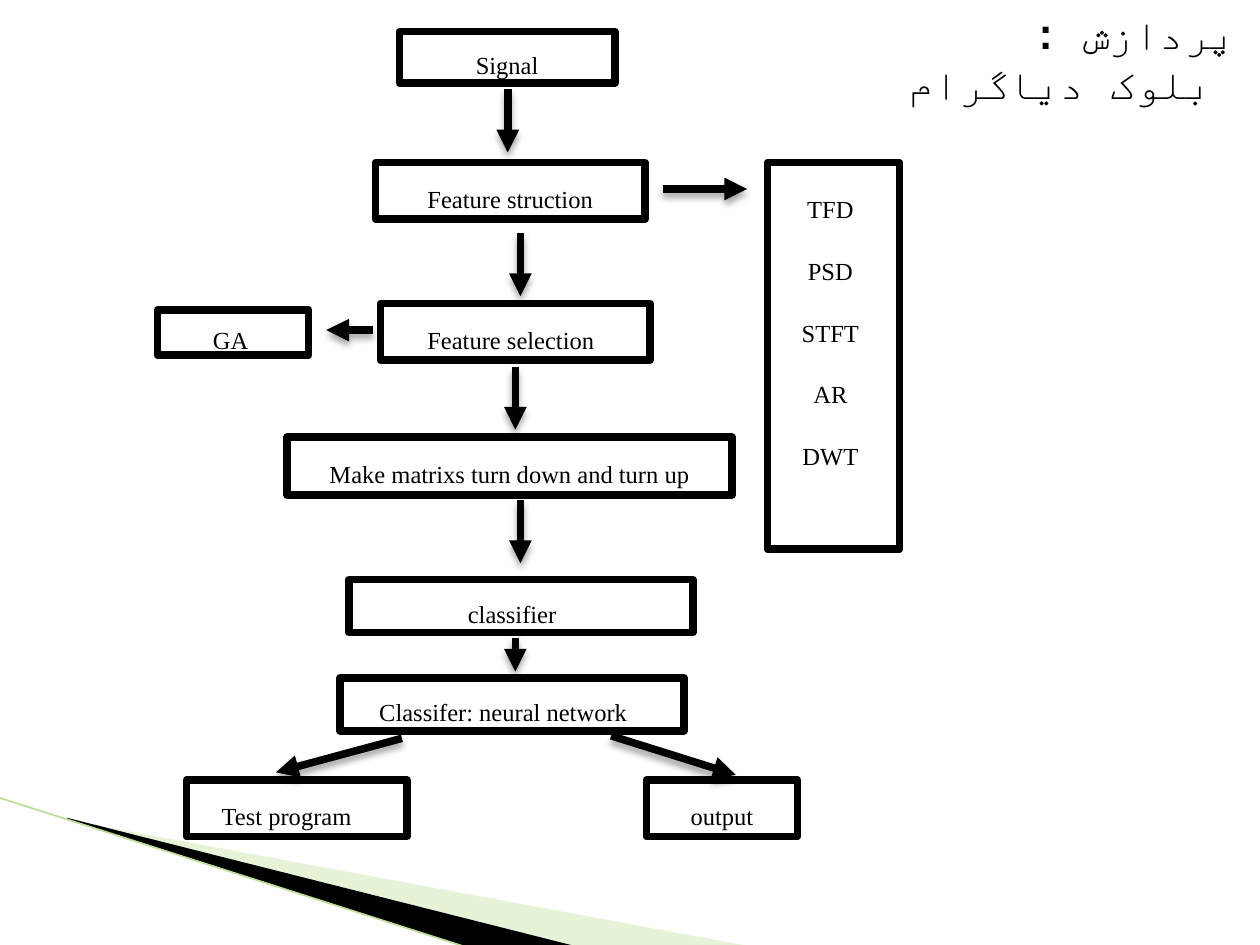
from lxml import etree
from pptx import Presentation
from pptx.dml.color import RGBColor
from pptx.enum.shapes import MSO_CONNECTOR as Connector, MSO_SHAPE as Shape
from pptx.enum.text import MSO_ANCHOR as Anchor, MSO_AUTO_SIZE as AutoSize, PP_ALIGN as Align
from pptx.oxml.ns import qn
from pptx.util import Inches, Pt

BLACK = RGBColor(0x00, 0x00, 0x00)
WHITE = RGBColor(0xFF, 0xFF, 0xFF)
LEAF = RGBColor(0xC3, 0xE1, 0x9D)
STEM = RGBColor(0xBD, 0xDC, 0x94)

BORDER = Pt(4.33)
TITLE_FONT = {"name": "Courier New", "size": Pt(24), "bold": True}
STEP_FONT = {"name": "Times New Roman", "size": Pt(14)}
STEP_SPACING = {"alignment": Align.CENTER, "line_spacing": 1.5, "space_after": Pt(10)}
STEP_FRAME = {"word_wrap": True, "vertical_anchor": Anchor.MIDDLE}
TITLE_FRAME = {**STEP_FRAME, "auto_size": AutoSize.NONE}

WEDGES = [
    ([(0.55, 6.51), (5.95, 7.51), (4.56, 7.51), (0.55, 6.5)], LEAF, 40),
    ([(0.53, 6.49), (4.57, 7.51), (3.72, 7.52), (0.54, 6.5)], BLACK, 100),
]
STEPS = [
    (["Signal"], (3.17, 0.25, 1.71, 0.41), -0.01),
    (["Feature struction"], (2.98, 1.29, 2.14, 0.45), -0.01),
    (["Feature selection"], (3.02, 2.41, 2.14, 0.45), 0.07),
    (["Make matrixs turn down and turn up"], (2.28, 3.47, 3.53, 0.46), -0.06),
    (["classifier"], (2.77, 4.6, 2.73, 0.42), 0.14),
    (["Classifer: neural network"], (2.7, 5.38, 2.73, 0.42), 0.14),
    (["Test program"], (1.48, 6.19, 1.75, 0.45), 0.16),
    (["output"], (5.13, 6.19, 1.2, 0.45), -0.02),
    (["GA"], (1.25, 2.46, 1.2, 0.36), 0.04),
]
FEATURES = ["TFD", "PSD", "STFT", "AR", "DWT"]
DOWN_ARROWS = [(4.03, 0.71, 0.5), (4.13, 1.85, 0.5), (4.09, 2.91, 0.5),
               (4.13, 3.97, 0.5), (4.09, 5.06, 0.27)]
SIDE_ARROWS = [((5.26, 1.5), (5.93, 1.5)), ((2.96, 2.62), (2.59, 2.62)),
               ((3.19, 5.86), (2.19, 6.13)), ((4.85, 5.84), (5.84, 6.15))]


def apply(target, values):
    for name, value in values.items():
        setattr(target, name, value)


def add_child(parent, tag, **attributes):
    return etree.SubElement(parent, qn(tag), attributes)


def set_right_to_left(paragraph, margin, indent):
    properties = paragraph._p.get_or_add_pPr()
    properties.set("marL", str(Inches(margin)))
    properties.set("indent", str(Inches(indent)))
    properties.set("rtl", "1")


def add_text(paragraph, words, font_values):
    run = paragraph.add_run()
    run.text = words
    apply(run.font, font_values)
    run.font.color.rgb = BLACK
    add_child(run._r.get_or_add_rPr(), "a:cs", typeface=font_values["name"])


def add_wedge(slide, points, color, opacity):
    corners = [(Inches(x), Inches(y)) for x, y in points]
    builder = slide.shapes.build_freeform(*corners[0])
    builder.add_line_segments(corners[1:])
    wedge = builder.convert_to_shape()
    wedge.shadow.inherit = False
    wedge.fill.solid()
    wedge.fill.fore_color.rgb = color
    wedge.line.fill.background()
    tint = wedge._element.spPr.find(qn("a:solidFill"))[0]
    add_child(tint, "a:alpha", val=str(opacity * 1000))


def add_line(slide, start, end, color, width):
    ends = [Inches(value) for value in (*start, *end)]
    line = slide.shapes.add_connector(Connector.STRAIGHT, *ends)
    line.line.color.rgb = color
    line.line.width = width
    effects = add_child(line._element.spPr, "a:effectLst")
    return line, effects


def add_arrow(slide, start, end):
    arrow, effects = add_line(slide, start, end, BLACK, BORDER)
    add_child(arrow.line._get_or_add_ln(), "a:tailEnd", type="triangle")
    shadow = add_child(effects, "a:outerShdw", blurRad=str(Pt(4)), dist=str(Pt(3)),
                       dir="5400000", rotWithShape="0")
    add_child(add_child(shadow, "a:srgbClr", val=str(BLACK)), "a:alpha", val="35000")


def add_step(slide, labels, place, indent):
    step = slide.shapes.add_shape(Shape.RECTANGLE, *map(Inches, place))
    step.shadow.inherit = False
    step.fill.solid()
    step.fill.fore_color.rgb = WHITE
    step.line.color.rgb = BLACK
    step.line.width = BORDER
    frame = step.text_frame
    apply(frame, STEP_FRAME)
    for index, label in enumerate(labels):
        paragraph = frame.add_paragraph() if index else frame.paragraphs[0]
        set_right_to_left(paragraph, 0, indent)
        apply(paragraph, STEP_SPACING)
        add_text(paragraph, label, STEP_FONT)
    return step


def add_title(slide, words):
    title = slide.shapes.title
    slide.shapes._spTree.append(title._element)
    apply(title, dict(zip(("left", "top", "width", "height"),
                          map(Inches, (7, 0.08, 2.9, 0.76)))))
    apply(title.text_frame, TITLE_FRAME)
    paragraph = title.text_frame.paragraphs[0]
    set_right_to_left(paragraph, 0.19, -0.19)
    paragraph.alignment = Align.RIGHT
    add_text(paragraph, words, TITLE_FONT)


def main():
    deck = Presentation()
    deck.slide_width, deck.slide_height = Inches(10), Inches(7.5)
    slide = deck.slides.add_slide(deck.slide_layouts[5])

    for points, color, opacity in WEDGES:
        add_wedge(slide, points, color, opacity)
    add_line(slide, (-0.01, 6.33), (3.71, 7.52), STEM, Pt(0.95))
    add_title(slide, "پردازش :  بلوک دیاگرام")

    for labels, place, indent in STEPS:
        add_step(slide, labels, place, indent)
    feature_list = add_step(slide, FEATURES, (6.09, 1.29, 1.05, 3.07), 0.05)
    feature_list.text_frame.margin_bottom = Inches(0.54)

    for x, top, length in DOWN_ARROWS:
        add_arrow(slide, (x, top), (x, top + length))
    for start, end in SIDE_ARROWS:
        add_arrow(slide, start, end)

    deck.save("out.pptx")


if __name__ == "__main__":
    main()
